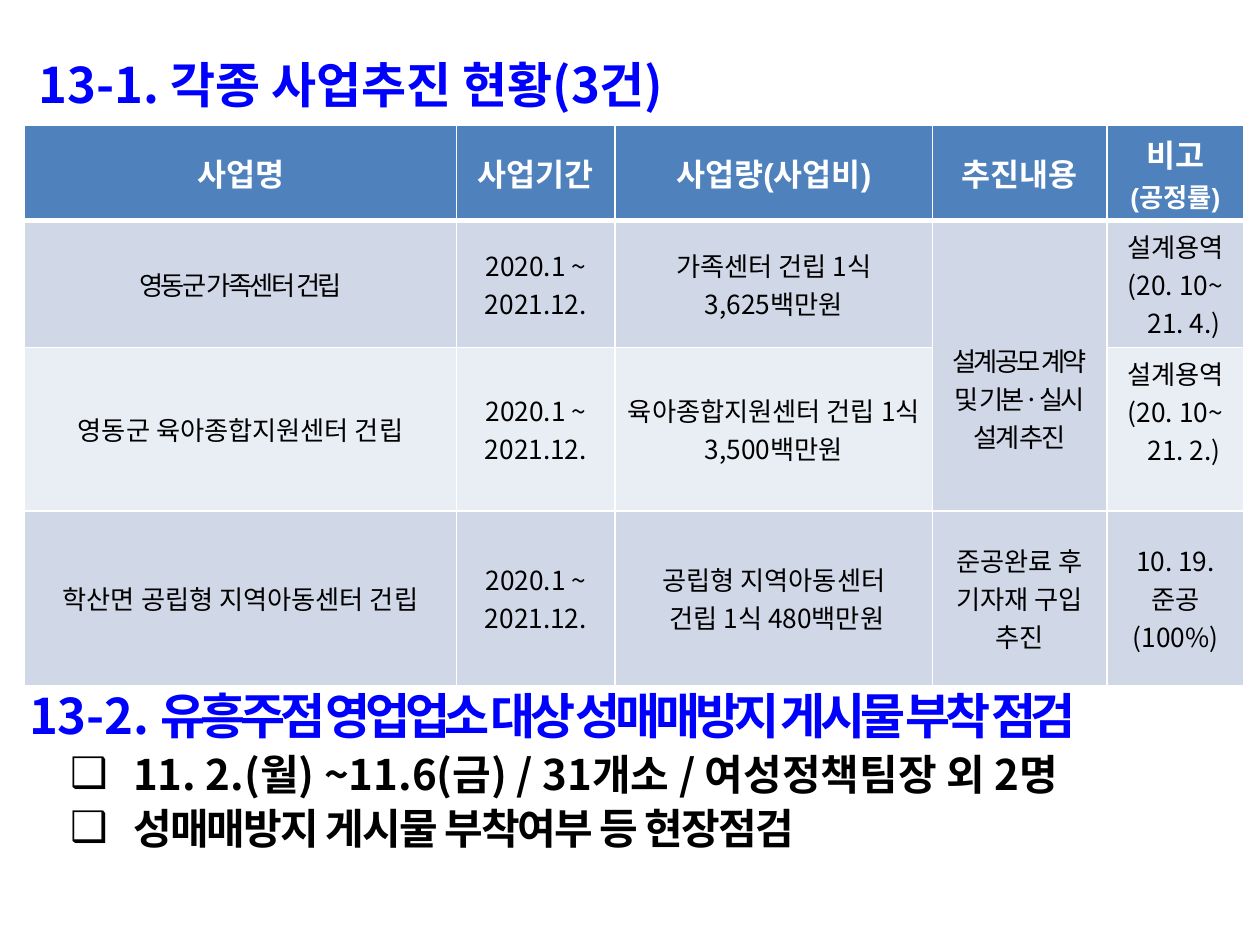
from lxml.etree import SubElement
from pptx import Presentation
from pptx.dml.color import RGBColor
from pptx.enum.text import MSO_ANCHOR, PP_ALIGN
from pptx.oxml.ns import qn
from pptx.util import Pt

HUES = {"blue": "0000FF", "black": "000000", "white": "FFFFFF",
        "head": "4F81BD", "dark": "D0D8E8", "light": "E9EDF4"}
FONT = "Noto Sans CJK KR"
COLS = [247, 90.5, 181.5, 99.5, 78.5]
ROWS = [54.5, 72.5, 93.5, 100]
TERM = ["2020.1 ~", "2021.12."]
HEAD = [["사업명"], ["사업기간"], ["사업량(사업비)"], ["추진내용"], ["비고", "(공정률)"]]
BODY = [
    [["영동군 가족센터 건립"], TERM, ["가족센터 건립 1식", "3,625백만원"],
     ["설계공모 계약", "및 기본·실시", "설계 추진"], ["설계용역", "(20. 10~", "21. 4.)"]],
    [["영동군 육아종합지원센터 건립"], TERM, ["육아종합지원센터 건립 1식 3,500백만원"],
     None, ["설계용역", "(20. 10~", "21. 2.)"]],
    [["학산면 공립형 지역아동센터 건립"], TERM,
     ["공립형 지역아동센터", " 건립 1식 480백만원"],
     ["준공완료 후 기자재 구입 추진"], ["10. 19. 준공", "(100%)"]],
]
TIGHT = {(1, 0), (1, 3)}
TOP = {(1, 3), (1, 4), (2, 4)}


def add_run(para, text, size, hue, bold=False, gap=0, face=FONT):
    """Add one styled run to a paragraph."""
    run = para.add_run()
    run.text = text
    font = run.font
    font.size, font.bold = Pt(size), bold
    font.color.rgb = RGBColor.from_string(HUES[hue])
    font.name = face
    props = font._element
    SubElement(props, qn("a:ea")).set("typeface", FONT)
    if gap:
        props.set("spc", str(int(gap * 100)))


def indent(para, left, first=0):
    """Set the left margin and first-line indent of a paragraph."""
    props = para._p.get_or_add_pPr()
    props.set("marL", str(Pt(left)))
    props.set("indent", str(Pt(first)))


def add_mark(para):
    """Give a paragraph a black box bullet."""
    props = para._p.get_or_add_pPr()
    SubElement(SubElement(props, qn("a:buClr")), qn("a:srgbClr")).set("val", HUES["black"])
    SubElement(props, qn("a:buFont")).set("typeface", "Arial")
    SubElement(props, qn("a:buChar")).set("char", "❑")


def add_box(slide, left, top, width, height):
    """Add an unwrapped text box and return its frame."""
    frame = slide.shapes.add_textbox(Pt(left), Pt(top), Pt(width), Pt(height)).text_frame
    frame.word_wrap = False
    return frame


def add_edge(cell, side, width):
    """Draw one white border of a cell."""
    line = SubElement(cell._tc.get_or_add_tcPr(), qn("a:" + side), w=str(Pt(width)))
    fill = SubElement(line, qn("a:solidFill"))
    SubElement(fill, qn("a:srgbClr")).set("val", HUES["white"])


def fill_cell(cell, row, col, lines):
    """Write, border and colour one table cell."""
    head = row == 0
    for side in ("lnL", "lnR", "lnT", "lnB"):
        heavy = (head and side == "lnB") or (row == 1 and side == "lnT")
        add_edge(cell, side, 3 if heavy else 1)
    cell.fill.solid()
    hue = "head" if head else "dark" if row % 2 else "light"
    cell.fill.fore_color.rgb = RGBColor.from_string(HUES[hue])
    cell.vertical_anchor = MSO_ANCHOR.TOP if (row, col) in TOP else MSO_ANCHOR.MIDDLE
    for num, text in enumerate(lines or []):
        frame = cell.text_frame
        para = frame.add_paragraph() if num else frame.paragraphs[0]
        para.alignment = PP_ALIGN.CENTER
        if text.startswith("21."):
            indent(para, 10)
        if head:
            add_run(para, text, 15 if num else 18, "white", True, face="Arial")
        else:
            add_run(para, text, 15, "black", gap=-1.5 if (row, col) in TIGHT else 0)


def add_grid(slide):
    """Add the table of projects."""
    grid = slide.shapes.add_table(len(ROWS), len(COLS), Pt(14), Pt(71.5),
                                  Pt(sum(COLS)), Pt(sum(ROWS))).table
    for col, width in zip(grid.columns, COLS):
        col.width = Pt(width)
    for row, height in zip(grid.rows, ROWS):
        row.height = Pt(height)
    for row, cells in enumerate([HEAD] + BODY):
        for col, lines in enumerate(cells):
            fill_cell(grid.cell(row, col), row, col, lines)
    plan = grid.cell(1, 3)
    plan.merge(grid.cell(2, 3))
    plan.margin_top = Pt(69)


def add_notice(slide):
    """Add the second heading with its two bullet points."""
    frame = add_box(slide, -3, 386, 727, 122)
    para = frame.paragraphs[0]
    indent(para, 42, -29.5)
    para.line_spacing = 1.07
    add_run(para, "13-2. ", 28, "blue", True)
    add_run(para, "유흥주점 영업업소 대상 성매매방지 게시물 부착 점검", 28, "blue", True, -3)
    points = [("11. 2.(월) ~11.6(금) / 31개소 / 여성정책팀장 외 2명", 0),
              ("성매매방지 게시물 부착여부 등 현장점검", -1)]
    for text, gap in points:
        para = frame.add_paragraph()
        para.level = 1
        para.line_spacing = 1.07
        indent(para, 72, -36)
        add_mark(para)
        add_run(para, text, 24, "black", True, gap)


def main():
    """Build and save the slide."""
    deck = Presentation()
    deck.slide_width, deck.slide_height = Pt(720), Pt(540)
    slide = deck.slides.add_slide(deck.slide_layouts[6])
    add_notice(slide)
    para = add_box(slide, 15, 21, 703, 364).paragraphs[0]
    para.line_spacing = 1.2
    add_run(para, "13-1. 각종 사업추진 현황(3건)", 28, "blue", True)
    add_grid(slide)
    deck.save("out.pptx")


if __name__ == "__main__":
    main()
